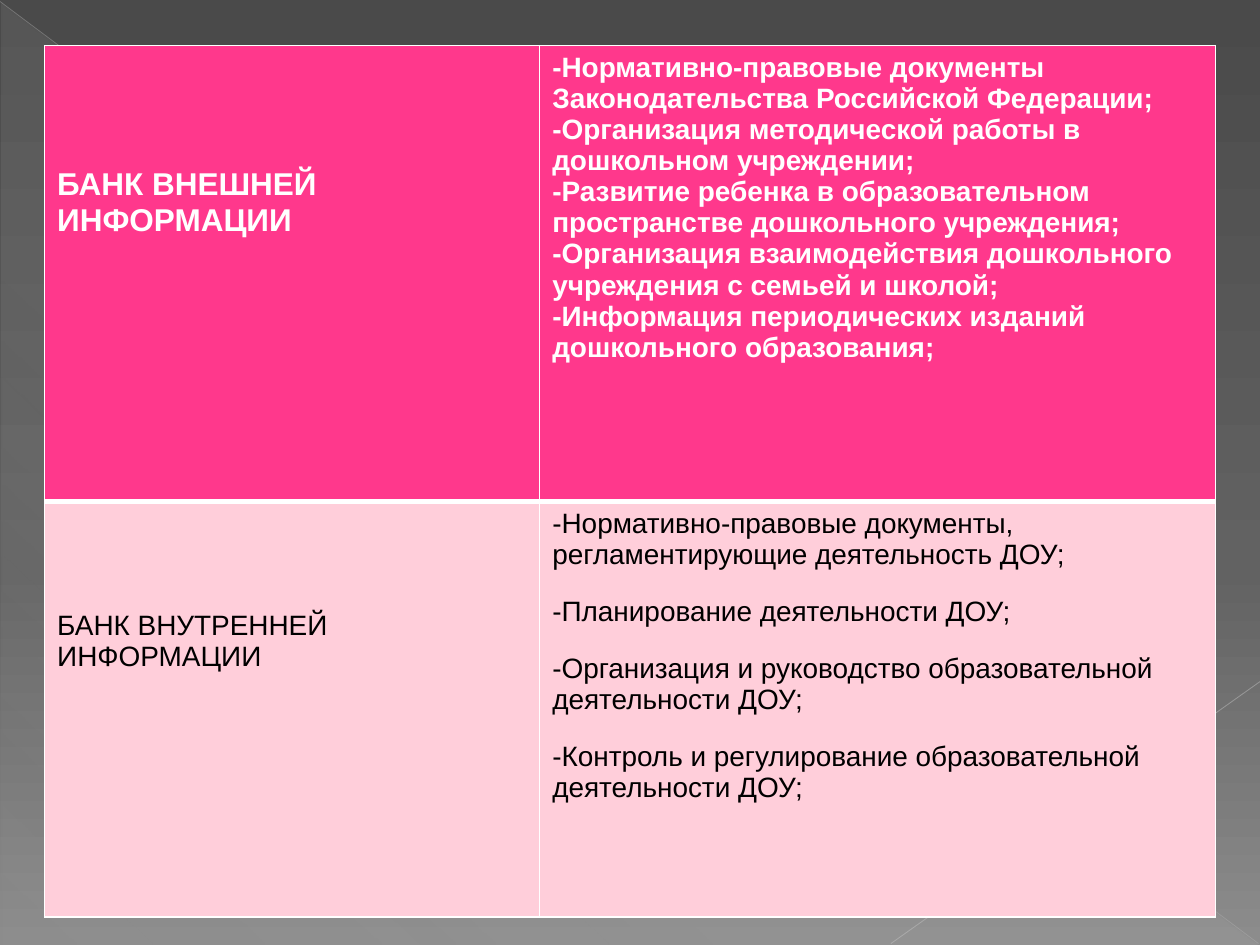
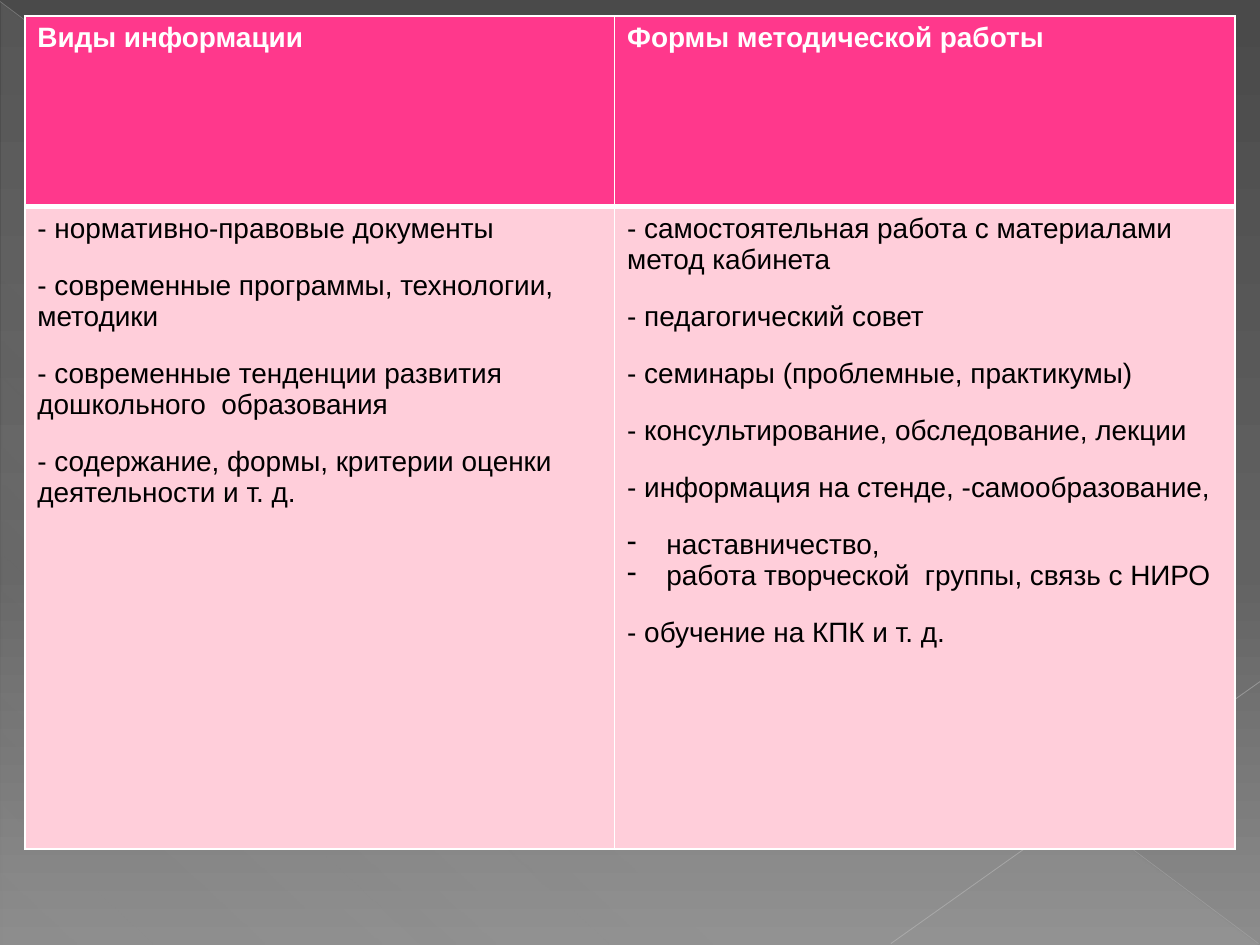
from dataclasses import dataclass

from pptx import Presentation
from pptx.dml.color import RGBColor
from pptx.enum.shapes import MSO_CONNECTOR, MSO_SHAPE
from pptx.oxml import parse_xml
from pptx.oxml.ns import nsdecls
from pptx.util import Cm, Pt

STRAIGHT = MSO_CONNECTOR.STRAIGHT
RIGHT_TRIANGLE = MSO_SHAPE.RIGHT_TRIANGLE
BLANK_LAYOUT = 6


@dataclass(frozen=True)
class Theme:
    font: str = "Arial"
    header_fill: str = "FF388C"
    body_fill: str = "FFCEDA"
    header_text: str = "FFFFFF"
    body_text: str = "000000"
    border: str = "FFFFFF"
    text_size: float = 16
    label_size: float = 18
    group_gap: float = 14.8
    thin: float = 1
    thick: float = 3
    background: tuple = ((0, "4A4A4A", 100), (60, "626262", 100), (100, "8C8C8C", 100))
    sheen: tuple = ((0, "D2D2D2", 10), (70, "D2D2D2", 8), (100, "D2D2D2", 1))


@dataclass(frozen=True)
class Group:
    lines: tuple
    bulleted: bool = False


@dataclass(frozen=True)
class CellText:
    groups: tuple
    size: float = Theme.text_size
    margin_top: float = 0.13


def apply_format(target, values):
    for name, value in values.items():
        setattr(target, name, value)


def paragraphs_apart(*lines):
    return tuple(Group((line,)) for line in lines)


def fill_gradient(fill, owner, stops, angle):
    fill.gradient()
    gradient = owner.xpath(".//a:gradFill")[0]
    stop_xml = "".join(
        f'<a:gs pos="{position * 1000}"><a:srgbClr val="{color}">'
        f'<a:alpha val="{opacity * 1000}"/></a:srgbClr></a:gs>'
        for position, color, opacity in stops
    )
    gradient.getparent().replace(gradient, parse_xml(
        f'<a:gradFill {nsdecls("a")} rotWithShape="1"><a:gsLst>{stop_xml}</a:gsLst>'
        f'<a:lin ang="{angle * 60000}" scaled="0"/></a:gradFill>'
    ))


class Deck:
    def __init__(self, theme):
        self.theme = theme
        self.slide = None
        self.presentation = Presentation()
        apply_format(self.presentation, {"slide_width": Cm(25.4), "slide_height": Cm(19.05)})
        master = self.presentation.slide_master
        fill_gradient(master.background.fill, master.element, theme.background, 90)

    def add_slide(self):
        layout = self.presentation.slide_layouts[BLANK_LAYOUT]
        self.slide = self.presentation.slides.add_slide(layout)
        self.add_sheen()
        self.add_line((0, 0.03), (25.37, 19.02), "BFBFBF", 0.39, 35)
        self.add_line((25.4, 13.74), (17.96, 19.02), "C6C6C6", 0.47, 45)

    def add_sheen(self):
        shape = self.slide.shapes.add_shape(
            RIGHT_TRIANGLE, Cm(0.03), Cm(0.05), Cm(25.35), Cm(19))
        shape.shadow.inherit = False
        shape.line.fill.background()
        fill_gradient(shape.fill, shape.element, self.theme.sheen, 133)

    def add_line(self, start, end, color, width, opacity):
        connector = self.slide.shapes.add_connector(
            STRAIGHT, *(Cm(value) for value in start + end))
        connector.line.color.rgb = RGBColor.from_string(color)
        connector.line.width = Pt(width)
        connector.element.xpath(".//a:srgbClr")[0].append(
            parse_xml(f'<a:alpha {nsdecls("a")} val="{opacity * 1000}"/>'))
        connector.element.spPr.append(parse_xml(f'<a:effectLst {nsdecls("a")}/>'))

    def add_table(self, left, top, widths, heights, rows):
        table = self.slide.shapes.add_table(
            len(heights), len(widths), Cm(left), Cm(top),
            Cm(sum(widths)), Cm(sum(heights))).table
        table.horz_banding = False
        for column, width in zip(table.columns, widths):
            column.width = Cm(width)
        for row, height in zip(table.rows, heights):
            row.height = Cm(height)
        for row_index, row_texts in enumerate(rows):
            for column_index, cell_text in enumerate(row_texts):
                self.fill_cell(table.cell(row_index, column_index), cell_text, row_index == 0)

    def fill_cell(self, cell, cell_text, is_header):
        theme = self.theme
        color = theme.header_fill if is_header else theme.body_fill
        cell.fill.solid()
        cell.fill.fore_color.rgb = RGBColor.from_string(color)
        cell.margin_top = Cm(cell_text.margin_top)
        self.add_borders(cell, "B" if is_header else "T")
        paragraph = None
        for group in cell_text.groups:
            for line_index, line in enumerate(group.lines):
                starts_group = paragraph is not None and line_index == 0
                if paragraph is None:
                    paragraph = cell.text_frame.paragraphs[0]
                else:
                    paragraph = cell.text_frame.add_paragraph()
                paragraph.space_before = Pt(theme.group_gap if starts_group else 0)
                self.add_text(paragraph, line, cell_text.size, is_header)
                if group.bulleted:
                    self.add_bullet(paragraph)

    def add_text(self, paragraph, text, size, is_header):
        theme = self.theme
        run = paragraph.add_run()
        run.text = text
        apply_format(run.font, {"name": theme.font, "size": Pt(size), "bold": is_header})
        color = theme.header_text if is_header else theme.body_text
        run.font.color.rgb = RGBColor.from_string(color)

    def add_bullet(self, paragraph):
        properties = paragraph._p.get_or_add_pPr()
        properties.set("marL", str(Cm(0.79)))
        properties.set("indent", str(-Cm(0.79)))
        properties.append(parse_xml(f'<a:buChar {nsdecls("a")} char="-"/>'))

    def add_borders(self, cell, thick_side):
        properties = cell._tc.get_or_add_tcPr()
        for index, side in enumerate("LRTB"):
            width = self.theme.thick if side == thick_side else self.theme.thin
            properties.insert(index, parse_xml(
                f'<a:ln{side} {nsdecls("a")} w="{Pt(width)}"><a:solidFill>'
                f'<a:srgbClr val="{self.theme.border}"/></a:solidFill></a:ln{side}>'))


def add_information_banks(deck):
    deck.add_slide()
    external_label = CellText(
        paragraphs_apart("БАНК ВНЕШНЕЙ ИНФОРМАЦИИ"), deck.theme.label_size, 2.45)
    external_items = CellText((Group((
        "-Нормативно-правовые документы Законодательства Российской Федерации;",
        "-Организация методической работы в дошкольном учреждении;",
        "-Развитие ребенка в образовательном пространстве дошкольного учреждения;",
        "-Организация взаимодействия дошкольного учреждения с семьей и школой;",
        "-Информация периодических изданий дошкольного образования;",
    )),))
    internal_label = CellText(
        paragraphs_apart("БАНК ВНУТРЕННЕЙ ИНФОРМАЦИИ"), margin_top=2.2)
    internal_items = CellText(paragraphs_apart(
        "-Нормативно-правовые документы, регламентирующие деятельность ДОУ;",
        "-Планирование деятельности ДОУ;",
        "-Организация и руководство образовательной деятельности ДОУ;",
        "-Контроль и регулирование образовательной деятельности ДОУ;",
    ))
    deck.add_table(0.9, 0.92, (9.98, 13.62), (9.19, 8.38), (
        (external_label, external_items),
        (internal_label, internal_items),
    ))


def add_work_forms(deck):
    deck.add_slide()
    headers = [
        CellText(paragraphs_apart(title))
        for title in ("Виды информации", "Формы методической работы")
    ]
    information_kinds = CellText((
        *paragraphs_apart(
            "- нормативно-правовые документы",
            "- современные программы, технологии, методики",
            "- современные тенденции развития дошкольного  образования",
        ),
        Group(("- содержание, формы, критерии оценки", "деятельности и т. д.")),
    ))
    work_forms = CellText((
        *paragraphs_apart(
            "- самостоятельная работа с материалами метод кабинета",
            "- педагогический совет",
            "- семинары (проблемные, практикумы)",
            "- консультирование, обследование, лекции",
            "- информация на стенде, -самообразование,",
        ),
        Group(("наставничество,", "работа творческой  группы, связь с НИРО"), bulleted=True),
        *paragraphs_apart("- обучение на КПК и т. д."),
    ))
    deck.add_table(0.5, 0.32, (11.89, 12.51), (3.84, 12.95), (
        headers,
        (information_kinds, work_forms),
    ))


def main():
    deck = Deck(Theme())
    add_information_banks(deck)
    add_work_forms(deck)
    deck.presentation.save("out.pptx")


if __name__ == "__main__":
    main()
